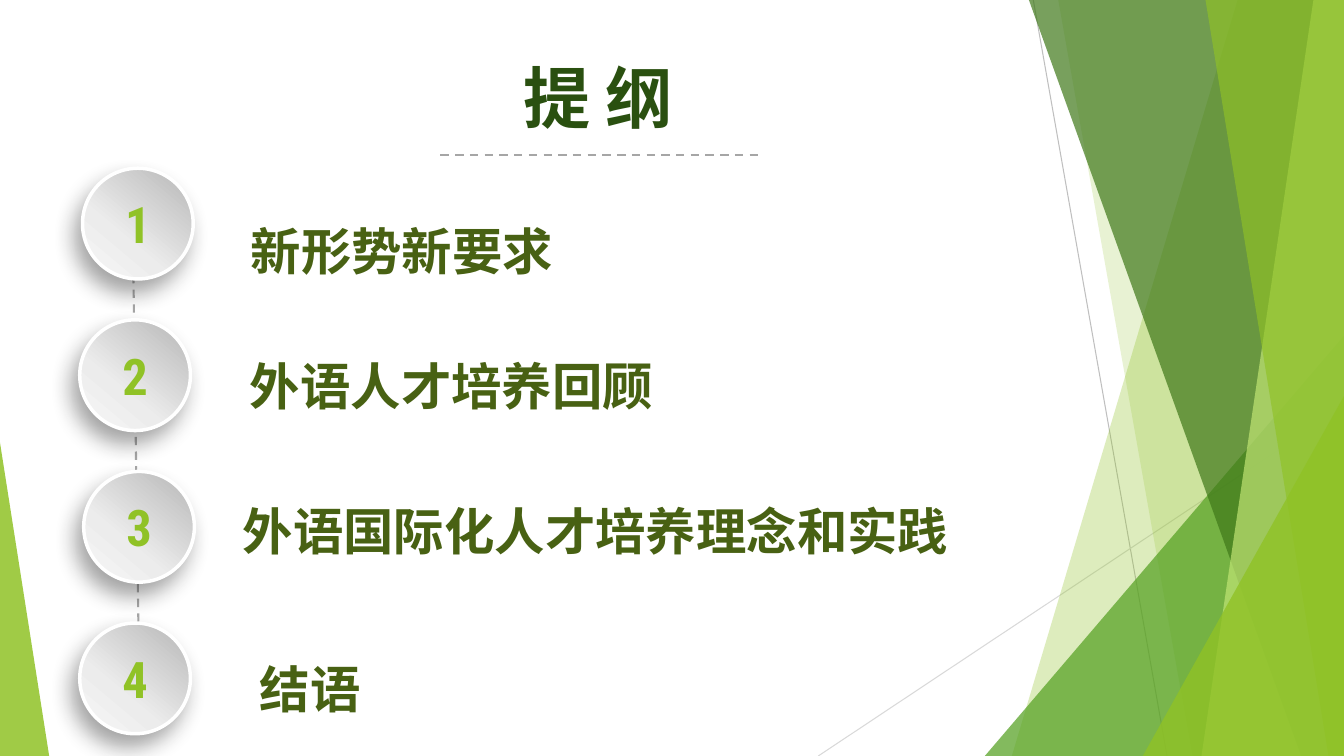
import lxml.etree
import pptx
import pptx.dml.color
import pptx.enum.dml
import pptx.enum.shapes
import pptx.enum.text
import pptx.oxml.ns
import pptx.util

Cm, Pt = pptx.util.Cm, pptx.util.Pt
RGBColor = pptx.dml.color.RGBColor
qn = pptx.oxml.ns.qn
SHAPES = pptx.enum.shapes.MSO_SHAPE
ALIGN = pptx.enum.text.PP_ALIGN
ANCHOR = pptx.enum.text.MSO_ANCHOR

LIME = RGBColor(0x90, 0xC2, 0x26)
LEAF = RGBColor(0x54, 0xA0, 0x21)
FOREST = RGBColor(0x3F, 0x78, 0x19)
PALE_LIME = RGBColor(0xC0, 0xE4, 0x74)
TITLE_GREEN = RGBColor(0x2A, 0x50, 0x10)
ITEM_GREEN = RGBColor(0x48, 0x61, 0x13)
WHITE = RGBColor(0xFF, 0xFF, 0xFF)
GREY = RGBColor(0xA6, 0xA6, 0xA6)
SILVER = RGBColor(0xBF, 0xBF, 0xBF)
LIGHT_GREY = RGBColor(0xD9, 0xD9, 0xD9)
BUTTON_STOPS = [(9, "BEBEBE"), (63, "ECECEC"), (100, "F7F7F7")]

TEXT_FONT = "Noto Sans CJK SC"
NUMBER_FONT = "Roboto Condensed"
WIDTH, HEIGHT = 33.87, 19.05

TITLE = "提 纲"
ITEMS = [
    ("新形势新要求", 6.07, 5.11, 2.08),
    ("外语人才培养回顾", 6.05, 8.51, 2.01),
    ("外语国际化人才培养理念和实践", 5.87, 12.17, 2.11),
    ("结语", 6.3, 16.15, 2.01),
]
BUTTON_TOP, BUTTON_PITCH, BUTTON_SIZE = 4.24, 3.82, 2.79
NUMBER_WIDTH, NUMBER_HEIGHT = 2.06, 1.8
CHARACTER_WIDTH, SIDE_INSETS, ITEM_HEIGHT = 1.27, 0.51, 2.11

THIN_LINES = [
    ((26.04, 0), (29.41, HEIGHT), SILVER),
    ((WIDTH, 10.24), (20.62, HEIGHT), LIGHT_GREY),
]
FACETS = [
    ("band", 31.19, 25.5, LIME, 30),
    ("band", 26.67, 30.05, LIME, 20),
    ("triangle", 24.82, 8.46, LEAF, 72),
    ("band", 25.93, 32.79, FOREST, 70),
    ("band", 33.1, 30.28, PALE_LIME, 70),
    ("band", 30.38, 33.48, LIME, 65),
    ("triangle", 28.8, 9.98, LIME, 80),
]


def add_child(parent, tag, **attributes):
    """Append a drawing element with the given attributes."""
    child = lxml.etree.SubElement(parent, qn(tag))
    for name, value in attributes.items():
        child.set(name, str(value))
    return child


def add_line(slide, start, end, color, width, dashed=False):
    """Draw a straight line without a shadow."""
    points = [Cm(value) for value in (*start, *end)]
    line = slide.shapes.add_connector(pptx.enum.shapes.MSO_CONNECTOR.STRAIGHT, *points)
    line.line.color.rgb = color
    line.line.width = Pt(width)
    if dashed:
        line.line.dash_style = pptx.enum.dml.MSO_LINE.DASH
    add_child(line._element.spPr, "a:effectLst")


def paint_facet(shape, color, opacity):
    """Give a shape a translucent fill and no outline."""
    shape.shadow.inherit = False
    shape.fill.solid()
    shape.fill.fore_color.rgb = color
    shape.line.fill.background()
    fill_color = shape._element.spPr.find(qn("a:solidFill")).find(qn("a:srgbClr"))
    add_child(fill_color, "a:alpha", val=opacity * 1000)


def add_band(slide, top_x, bottom_x):
    """Build a band that reaches from a slanted edge to the right side."""
    builder = slide.shapes.build_freeform(Cm(top_x), Cm(0))
    corners = [(WIDTH, 0), (WIDTH, HEIGHT), (bottom_x, HEIGHT)]
    builder.add_line_segments([(Cm(x), Cm(y)) for x, y in corners], close=True)
    return builder.convert_to_shape()


def add_triangle(slide, left, top, right, apex):
    """Build a triangle that stands on the bottom edge."""
    shape = slide.shapes.add_shape(
        SHAPES.ISOSCELES_TRIANGLE, Cm(left), Cm(top), Cm(right - left), Cm(HEIGHT - top))
    shape.adjustments[0] = apex
    return shape


def add_run(paragraph, text, size, font, color):
    """Add one bold run in the given font."""
    run = paragraph.add_run()
    run.text = text
    run.font.size = Pt(size)
    run.font.bold = True
    run.font.name = font
    run.font.color.rgb = color
    add_child(run._r.get_or_add_rPr(), "a:ea", typeface=font)
    return run


def add_button(slide, number, left, top):
    """Draw a raised round button with its number."""
    button = slide.shapes.add_shape(
        SHAPES.OVAL, Cm(left), Cm(top), Cm(BUTTON_SIZE), Cm(BUTTON_SIZE))
    button.line.color.rgb = WHITE
    button.line.width = Pt(2.5)
    button.fill.gradient()
    button.fill.gradient_angle = 230
    properties = button._element.spPr
    stops = properties.find(qn("a:gradFill")).find(qn("a:gsLst"))
    stops.clear()
    for position, color in BUTTON_STOPS:
        stop = add_child(stops, "a:gs", pos=position * 1000)
        add_child(stop, "a:srgbClr", val=color)
    button.shadow.inherit = False
    shadow = add_child(
        properties.find(qn("a:effectLst")), "a:outerShdw",
        blurRad=Pt(16), dist=Pt(10), dir=120 * 60000, algn="ctr", rotWithShape=0)
    add_child(add_child(shadow, "a:srgbClr", val="1A1A1A"), "a:alpha", val=40000)

    box = slide.shapes.add_textbox(
        Cm(left + (BUTTON_SIZE - NUMBER_WIDTH) / 2),
        Cm(top + (BUTTON_SIZE - NUMBER_HEIGHT) / 2),
        Cm(NUMBER_WIDTH), Cm(NUMBER_HEIGHT))
    box.text_frame.word_wrap = True
    box.text_frame.vertical_anchor = ANCHOR.MIDDLE
    paragraph = box.text_frame.paragraphs[0]
    paragraph.alignment = ALIGN.CENTER
    run = add_run(paragraph, str(number), 36, NUMBER_FONT, LIME)
    run._r.get_or_add_rPr().set("spc", "300")


def add_item(slide, text, left, top):
    """Write one outline entry."""
    width = len(text) * CHARACTER_WIDTH + SIDE_INSETS
    box = slide.shapes.add_textbox(Cm(left), Cm(top), Cm(width), Cm(ITEM_HEIGHT))
    box.text_frame.word_wrap = False
    paragraph = box.text_frame.paragraphs[0]
    paragraph.line_spacing = 1.2
    paragraph.space_before = paragraph.space_after = Pt(6)
    add_run(paragraph, text, 36, TEXT_FONT, ITEM_GREEN)


def add_title(slide):
    """Fill the title placeholder and underline it."""
    title = slide.shapes.title
    title.left, title.top, title.width, title.height = Cm(12.93), Cm(1.3), Cm(4.34), Cm(2.31)
    frame = title.text_frame
    frame.word_wrap = False
    frame.auto_size = pptx.enum.text.MSO_AUTO_SIZE.NONE
    frame.vertical_anchor = ANCHOR.TOP
    frame.paragraphs[0].alignment = ALIGN.LEFT
    add_run(frame.paragraphs[0], TITLE, 48, TEXT_FONT, TITLE_GREEN)
    add_line(slide, (11.1, 3.91), (19.1, 3.91), GREY, 1.5, dashed=True)


def main():
    """Build the outline slide and save it."""
    presentation = pptx.Presentation()
    presentation.slide_width, presentation.slide_height = Cm(WIDTH), Cm(HEIGHT)
    slide = presentation.slides.add_slide(presentation.slide_layouts[5])
    for start, end, color in THIN_LINES:
        add_line(slide, start, end, color, 0.75)
    for kind, first, second, color, opacity in FACETS:
        if kind == "band":
            facet = add_band(slide, first, second)
        else:
            facet = add_triangle(slide, first, second, WIDTH, 1)
        paint_facet(facet, color, opacity)
    paint_facet(add_triangle(slide, 0, 11.15, 1.24, 0), LIME, 85)
    add_line(slide, (3.33, 4.7), (3.51, 17.27), GREY, 1.5, dashed=True)
    for index, (text, left, top, button_left) in enumerate(ITEMS):
        add_button(slide, index + 1, button_left, BUTTON_TOP + index * BUTTON_PITCH)
        add_item(slide, text, left, top)
    add_title(slide)
    presentation.save("out.pptx")


if __name__ == "__main__":
    main()
